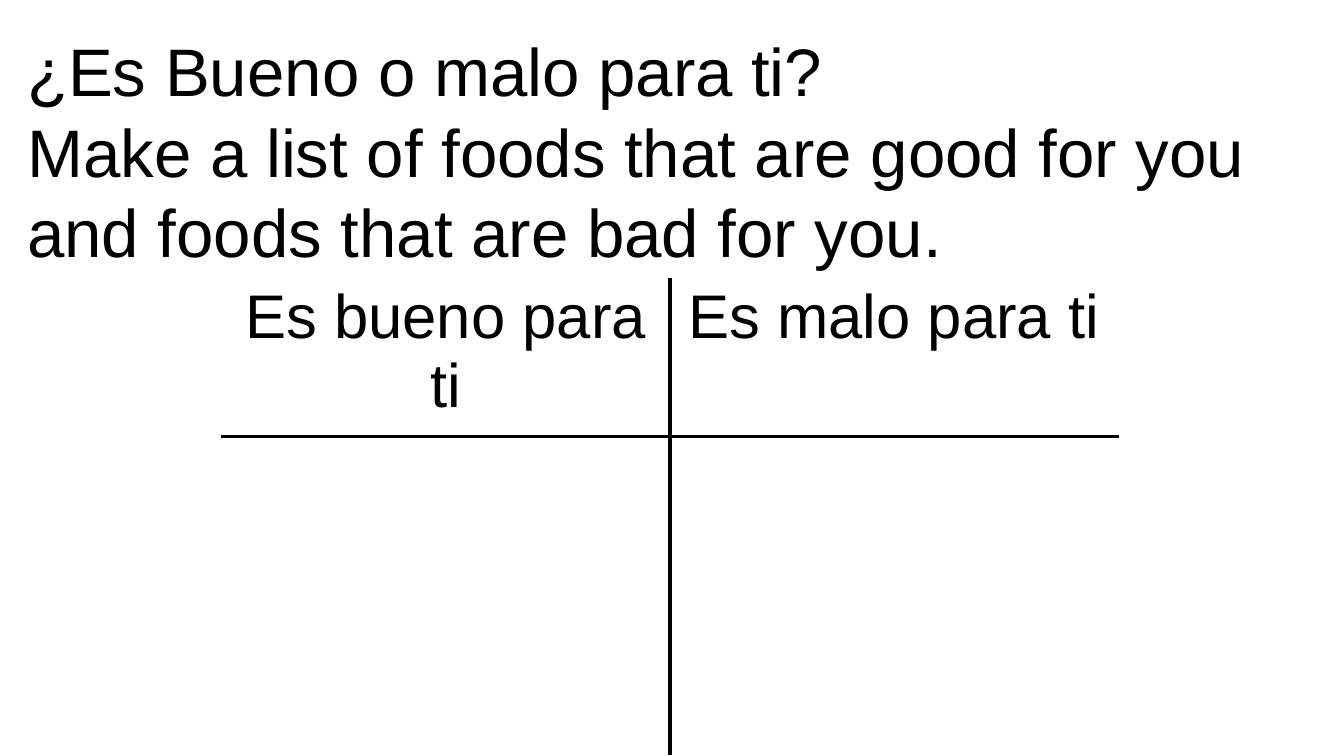
from dataclasses import dataclass

import pptx
import pptx.dml.color
import pptx.enum.text
import pptx.oxml
import pptx.oxml.ns
import pptx.util
from pptx.util import Inches


@dataclass(frozen=True)
class Theme:
    font: str = "Arial"
    ink: str = "000000"
    title_size: int = 48
    header_size: int = 44
    rule_width: int = 3


THEME = Theme()


def style_paragraph(p, size, align):
    p.alignment = align
    p.font.name = THEME.font
    p.font.size = pptx.util.Pt(size)
    p.font.color.rgb = pptx.dml.color.RGBColor.from_string(THEME.ink)


def add_title(s, lines, left, top, width, height):
    sp = s.shapes.title
    sp.left, sp.top, sp.width, sp.height = left, top, width, height
    tf = sp.text_frame
    tf.word_wrap = True
    tf.auto_size = pptx.enum.text.MSO_AUTO_SIZE.SHAPE_TO_FIT_TEXT
    tf.vertical_anchor = pptx.enum.text.MSO_ANCHOR.TOP
    tf.text = "\n".join(lines)
    for p in tf.paragraphs:
        style_paragraph(p, THEME.title_size, pptx.enum.text.PP_ALIGN.LEFT)


def set_borders(cell, sides):
    """Rule the given sides (L, R, T, B, in that order) of a cell."""
    tc_pr = cell._tc.get_or_add_tcPr()
    for i, side in enumerate(sides):
        tc_pr.insert(i, pptx.oxml.parse_xml(
            f'<a:ln{side} {pptx.oxml.ns.nsdecls("a")} w="{pptx.util.Pt(THEME.rule_width)}">'
            f'<a:solidFill><a:srgbClr val="{THEME.ink}"/></a:solidFill></a:ln{side}>'))


def add_t_chart(s, headers, left, top, width, height, header_height):
    table = s.shapes.add_table(2, len(headers), left, top, width, height).table
    table.first_row = table.horz_banding = False
    table.rows[0].height = header_height
    table.rows[1].height = height - header_height

    # Headings
    for cell, header in zip(table.rows[0].cells, headers):
        cell.text = header
        style_paragraph(cell.text_frame.paragraphs[0], THEME.header_size,
                        pptx.enum.text.PP_ALIGN.CENTER)

    # Only the inner rules show
    for row, across in enumerate("BT"):
        for col, upright in enumerate("RL"):
            cell = table.cell(row, col)
            cell.fill.background()
            set_borders(cell, upright + across)


def main():
    prs = pptx.Presentation()
    prs.slide_width, prs.slide_height = Inches(13.33), Inches(7.5)
    s = prs.slides.add_slide(prs.slide_layouts[5])

    # Question and task
    add_title(s, ["¿Es Bueno o malo para ti?",
                  "Make a list of foods that are good for you and foods that are bad for you."],
              Inches(0.17), Inches(0.24), Inches(12.96), Inches(2.52))

    # Good and bad columns
    add_t_chart(s, ["Es bueno para ti", "Es malo para ti"],
                Inches(2.2), Inches(2.76), Inches(8.89), Inches(4.74), Inches(1.57))

    prs.save("out.pptx")


if __name__ == "__main__":
    main()
